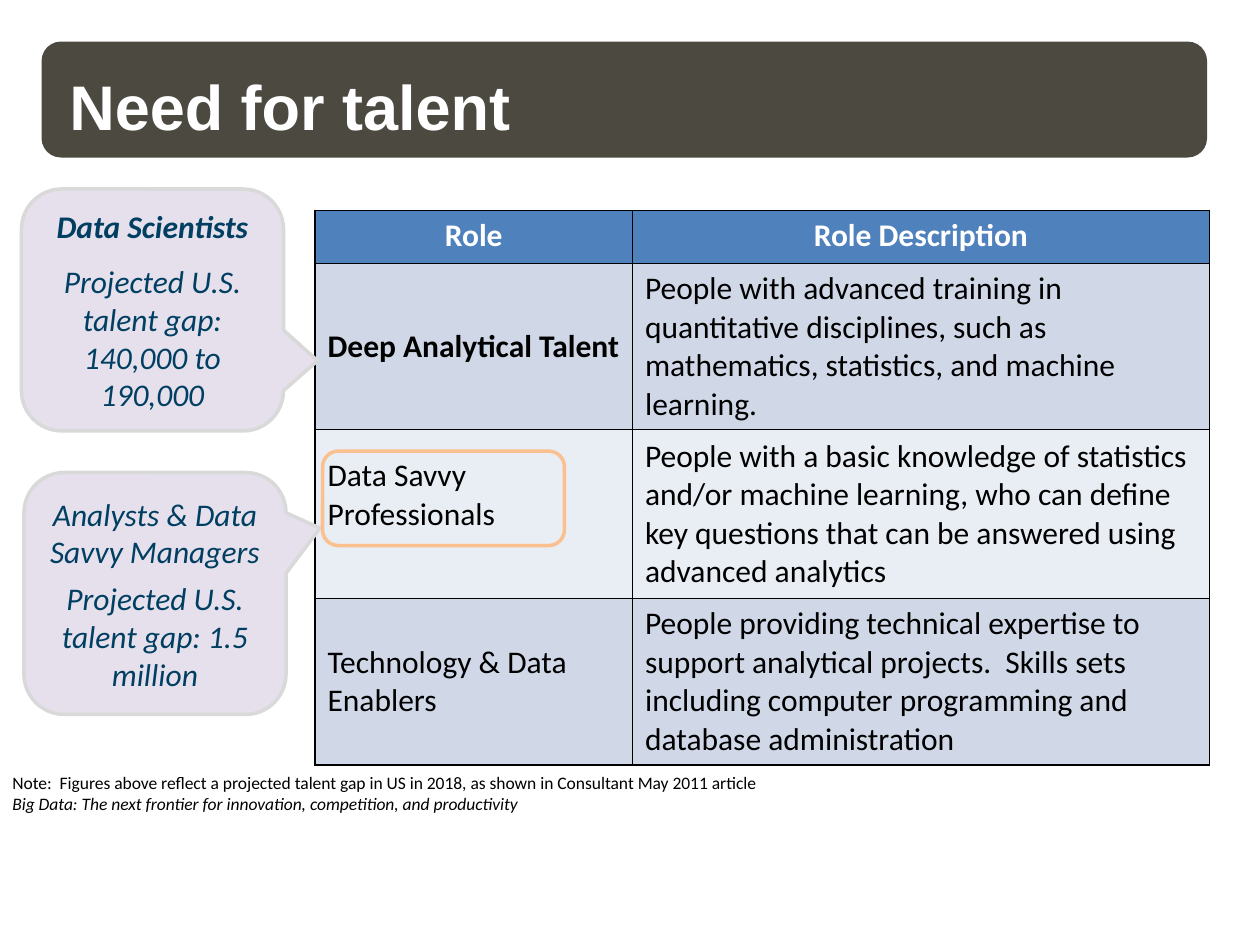
"""Build the talent slide: title banner, role table, callouts and note."""
from dataclasses import dataclass

import pptx
import pptx.dml.color
import pptx.enum.shapes
import pptx.enum.text
import pptx.oxml
import pptx.oxml.ns
import pptx.util
from pptx.util import Inches

RGBColor = pptx.dml.color.RGBColor
Align = pptx.enum.text.PP_ALIGN
Anchor = pptx.enum.text.MSO_ANCHOR
Kind = pptx.enum.shapes.MSO_SHAPE

WHITE = RGBColor(0xFF, 0xFF, 0xFF)
BLACK = RGBColor(0, 0, 0)
DARK = RGBColor(0x1E, 0x1C, 0x11)
BLUE = RGBColor(0x4F, 0x81, 0xBD)
BAND = RGBColor(0xD0, 0xD8, 0xE8)
PALE = RGBColor(0xE9, 0xED, 0xF4)
LILAC = RGBColor(0xE6, 0xE0, 0xEC)
GREY = RGBColor(0xD9, 0xD9, 0xD9)
NAVY = RGBColor(0x00, 0x3F, 0x62)
PEACH = RGBColor(0xFA, 0xC0, 0x90)


@dataclass
class Callout:
    """A speech bubble beside the table."""
    left: float
    top: float
    tip: tuple
    head: str
    body: str
    bold: bool
    gap: int


@dataclass
class Role:
    """A body row of the table."""
    name: str
    about: str
    high: float
    fill: RGBColor
    bold: bool = False
    lift: float = 0.05


CALLS = [
    Callout(0.17, 1.5, (0.63, 0.21), "Data Scientists",
            "Projected U.S. talent gap: 140,000 to 190,000", True, 10),
    Callout(0.19, 3.75, (0.63, -0.27), "Analysts & Data Savvy Managers",
            "Projected U.S. talent gap: 1.5 million", False, 5),
]
ROLES = [
    Role("Deep Analytical Talent",
         "People with advanced training in quantitative disciplines, such as "
         "mathematics, statistics, and machine learning.", 1.32, BAND, bold=True),
    Role("Data Savvy Professionals",
         "People with a basic knowledge of statistics and/or machine learning, "
         "who can define key questions that can be answered using advanced "
         "analytics", 1.34, PALE, lift=0.35),
    Role("Technology & Data Enablers",
         "People providing technical expertise to support analytical projects.  "
         "Skills sets including computer programming and database "
         "administration", 1.32, BAND),
]


def write(frame, text: str, size=18, color=BLACK, bold=False, italic=False,
          face="Calibri", align=Align.LEFT, after=0, pitch=None):
    """Add a formatted paragraph to a text frame."""
    para = frame.add_paragraph() if frame.text else frame.paragraphs[0]
    para.alignment = align
    para.space_before = pptx.util.Pt(0)
    para.space_after = pptx.util.Pt(after)
    if pitch:
        para.line_spacing = pptx.util.Pt(pitch)
    run = para.add_run()
    run.text = text
    font = run.font
    font.name, font.size = face, pptx.util.Pt(size)
    font.bold, font.italic = bold, italic
    font.color.rgb = color


def block(slide, kind, box: tuple, fill=None, line=None):
    """Draw a flat preset shape."""
    shape = slide.shapes.add_shape(kind, *map(Inches, box))
    shape.shadow.inherit = False
    if fill is None:
        shape.fill.background()
    else:
        shape.fill.solid()
        shape.fill.fore_color.rgb = fill
    if line is None:
        shape.line.fill.background()
    else:
        shape.line.color.rgb = line
        shape.line.width = pptx.util.Pt(2)
    return shape


def style(cell, fill: RGBColor):
    """Give a cell black borders and a fill."""
    props = cell._tc.get_or_add_tcPr()
    for side in "LRTB":
        props.append(pptx.oxml.parse_xml(
            f'<a:ln{side} {pptx.oxml.ns.nsdecls("a")} w="12700"><a:solidFill>'
            f'<a:srgbClr val="{BLACK}"/></a:solidFill></a:ln{side}>'))
    cell.fill.solid()
    cell.fill.fore_color.rgb = fill


def banner(slide):
    """Draw the title on its translucent banner."""
    shape = block(slide, Kind.ROUNDED_RECTANGLE, (0.33, 0.33, 9.25, 0.92), DARK)
    tint = shape.element.find(".//" + pptx.oxml.ns.qn("a:srgbClr"))
    tint.append(pptx.oxml.parse_xml(
        f'<a:alpha {pptx.oxml.ns.nsdecls("a")} val="80000"/>'))
    title = slide.shapes.title
    title.element.getparent().append(title.element)
    title.left, title.top, title.width, title.height = map(
        Inches, (0.55, 0.13, 9.2, 1.01))
    frame = title.text_frame
    frame.auto_size = pptx.enum.text.MSO_AUTO_SIZE.NONE
    frame.vertical_anchor = Anchor.BOTTOM
    frame.margin_left = frame.margin_right = 0
    frame.margin_top = frame.margin_bottom = 0
    write(frame, "Need for talent", size=36, color=WHITE, bold=True,
          face="Arial", pitch=36)


def grid(slide, roles: list):
    """Draw the role table."""
    high = 0.42 + sum(role.high for role in roles)
    table = slide.shapes.add_table(
        len(roles) + 1, 2, *map(Inches, (2.5, 1.67, 7.1, high))).table
    for col, wide in zip(table.columns, (2.52, 4.58)):
        col.width = Inches(wide)
    table.rows[0].height = Inches(0.42)
    for cell, text in zip(table.rows[0].cells, ("Role", "Role Description")):
        style(cell, BLUE)
        write(cell.text_frame, text, color=WHITE, bold=True, align=Align.CENTER)
    for row, role in zip(list(table.rows)[1:], roles):
        row.height = Inches(role.high)
        name, about = row.cells
        for cell, text, bold in ((name, role.name, role.bold),
                                 (about, role.about, False)):
            style(cell, role.fill)
            cell.vertical_anchor = Anchor.MIDDLE
            write(cell.text_frame, text, bold=bold)
        name.margin_bottom = Inches(role.lift)


def bubble(slide, call: Callout):
    """Draw a callout with a heading and a figure."""
    shape = block(slide, Kind.ROUNDED_RECTANGULAR_CALLOUT,
                  (call.left, call.top, 2.08, 1.92), LILAC, GREY)
    shape.adjustments[0], shape.adjustments[1] = call.tip
    frame = shape.text_frame
    frame.word_wrap = True
    frame.vertical_anchor = Anchor.MIDDLE
    write(frame, call.head, color=NAVY, bold=call.bold, italic=True,
          align=Align.CENTER, after=call.gap)
    write(frame, call.body, color=NAVY, italic=True, align=Align.CENTER)


def main():
    """Build and save the slide."""
    deck = pptx.Presentation()
    deck.slide_width, deck.slide_height = Inches(10), Inches(7.5)
    slide = deck.slides.add_slide(deck.slide_layouts[5])
    banner(slide)
    grid(slide, ROLES)
    note = slide.shapes.add_textbox(
        *map(Inches, (0, 6.08, 9.4, 0.44))).text_frame
    note.word_wrap = True
    write(note, "Note:  Figures above reflect a projected talent gap in US in "
          "2018, as shown in Consultant May 2011 article", size=10)
    write(note, "Big Data: The next frontier for innovation, competition, and "
          "productivity", size=10, italic=True)
    for call in CALLS:
        bubble(slide, call)
    block(slide, Kind.ROUNDED_RECTANGLE, (2.56, 3.58, 1.92, 0.75), line=PEACH)
    deck.save("out.pptx")


if __name__ == "__main__":
    main()
